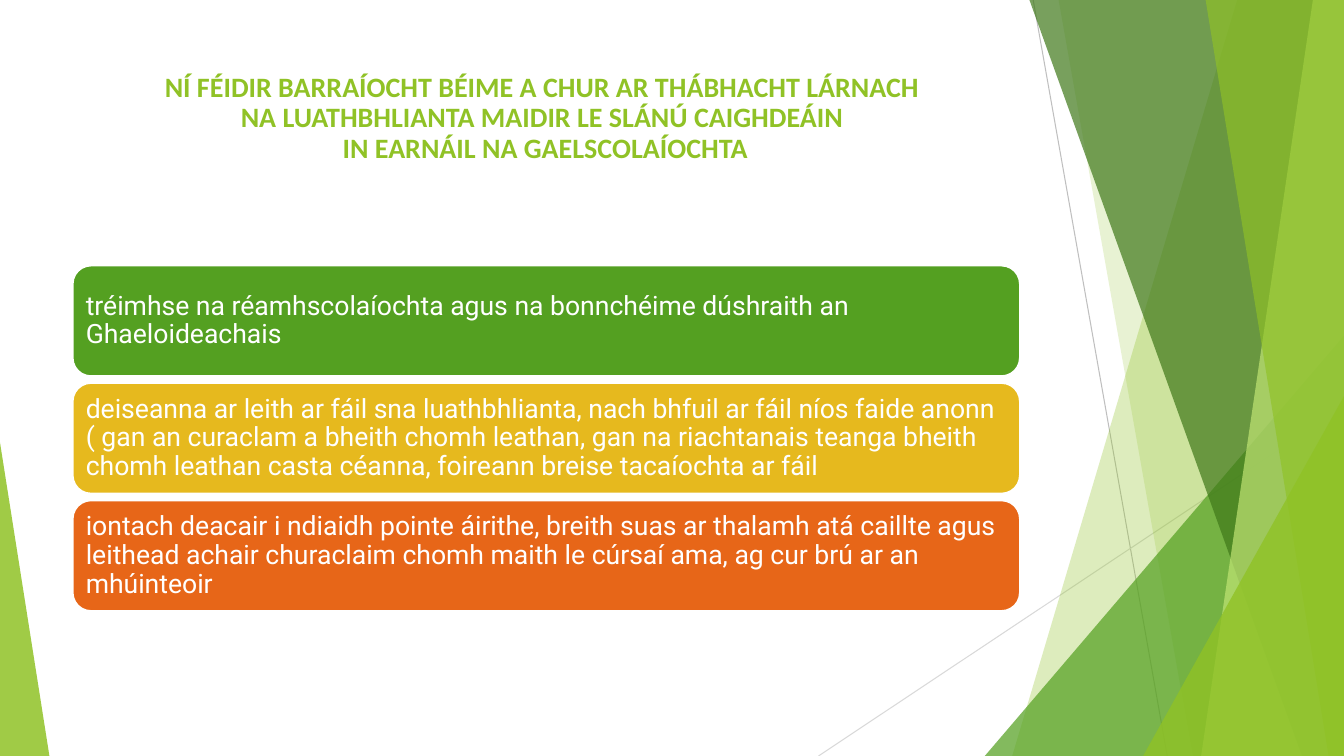
"""Build the slide on the central importance of the early years in Irish-medium education."""
from lxml import etree
from pptx import Presentation
from pptx.dml.color import RGBColor
from pptx.enum.shapes import MSO_CONNECTOR, MSO_SHAPE
from pptx.enum.text import MSO_ANCHOR, PP_ALIGN
from pptx.oxml.ns import qn
from pptx.util import Pt

ROUNDED = MSO_SHAPE.ROUNDED_RECTANGLE
TRIANGLE = MSO_SHAPE.ISOSCELES_TRIANGLE
STRAIGHT = MSO_CONNECTOR.STRAIGHT
LEFT, CENTER = PP_ALIGN.LEFT, PP_ALIGN.CENTER
TOP, MIDDLE = MSO_ANCHOR.TOP, MSO_ANCHOR.MIDDLE

WHITE = RGBColor(0xFF, 0xFF, 0xFF)
LIME = RGBColor(0x90, 0xC2, 0x26)
PALE_LIME = RGBColor(0xC0, 0xE4, 0x74)
GREEN = RGBColor(0x54, 0xA0, 0x21)
DARK_GREEN = RGBColor(0x3F, 0x78, 0x19)
GOLD = RGBColor(0xE6, 0xB9, 0x1E)
ORANGE = RGBColor(0xE7, 0x66, 0x18)
GREY = RGBColor(0xBF, 0xBF, 0xBF)
LIGHT_GREY = RGBColor(0xD9, 0xD9, 0xD9)

HEADING = (
    "NÍ FÉIDIR BARRAÍOCHT BÉIME A CHUR AR THÁBHACHT LÁRNACH ",
    "NA LUATHBHLIANTA MAIDIR LE SLÁNÚ CAIGHDEÁIN ",
    "IN EARNÁIL NA GAELSCOLAÍOCHTA",
)
POINTS = [
    ("tréimhse na réamhscolaíochta agus na bonnchéime dúshraith an Ghaeloideachais", GREEN),
    ("deiseanna ar leith ar fáil sna luathbhlianta, nach bhfuil ar fáil níos faide anonn "
     "( gan an curaclam a bheith chomh leathan, gan na riachtanais teanga bheith "
     "chomh leathan casta céanna, foireann breise tacaíochta ar fáil", GOLD),
    ("iontach deacair i ndiaidh pointe áirithe, breith suas ar thalamh atá caillte agus "
     "leithead achair churaclaim chomh maith le cúrsaí ama, ag cur brú ar an mhúinteoir", ORANGE),
]

SLIDE_W, SLIDE_H = 960, 540
BLEED = 0.6
RAYS = [
    ((738, 0), (833.76, SLIDE_H), GREY),
    ((SLIDE_W, 290.16), (584.64, SLIDE_H), LIGHT_GREY),
]
FACETS = [
    ("shard", (884.16, 722.88), LIME, 30),
    ("shard", (756, 851.76), LIME, 20),
    ("peak", (703.44, 239.76, 256.56, 1), GREEN, 72),
    ("shard", (735.12, 929.52), DARK_GREEN, 70),
    ("shard", (938.16, 858.24), PALE_LIME, 70),
    ("shard", (861.12, 948.96), LIME, 65),
    ("peak", (816.48, 282.96, 143.52, 1), LIME, 80),
    ("peak", (0, 316.08, 35.28, 0), LIME, 85),
]
CARD_X, CARD_Y, CARD_W, CARD_H, CARD_PITCH = 51.84, 189.6, 676.8, 79.2, 83.88


def write(shape, text, *, font, size, color, bold=False, align=LEFT, anchor=TOP,
          inset_x=7.2, inset_y=3.6):
    frame = shape.text_frame
    frame.word_wrap = True
    frame.vertical_anchor = anchor
    frame.margin_left = frame.margin_right = Pt(inset_x)
    frame.margin_top = frame.margin_bottom = Pt(inset_y)
    paragraph = frame.paragraphs[0]
    paragraph.text = text
    paragraph.alignment = align
    paragraph.line_spacing = 0.9
    for run in paragraph.runs:
        run.font.name = font
        run.font.size = Pt(size)
        run.font.bold = bold
        run.font.color.rgb = color


def paint(shape, color, opacity=100):
    shape.shadow.inherit = False
    shape.fill.solid()
    shape.fill.fore_color.rgb = color
    shape.line.fill.background()
    if opacity < 100:
        tint = shape.fill._xPr.find(qn("a:solidFill"))[0]
        etree.SubElement(tint, qn("a:alpha"), val=str(opacity * 1000))


def add_ray(shapes, start, end, color):
    ray = shapes.add_connector(STRAIGHT, *map(Pt, start + end))
    ray.line.color.rgb = color
    ray.line.width = Pt(0.75)
    etree.SubElement(ray._element.spPr, qn("a:effectLst"))


def add_shard(shapes, top_x, bottom_x):
    outline = shapes.build_freeform(top_x, -BLEED, scale=Pt(1))
    outline.add_line_segments(
        [(SLIDE_W, -BLEED), (SLIDE_W, SLIDE_H), (bottom_x, SLIDE_H)], close=True)
    return outline.convert_to_shape()


def add_peak(shapes, left, top, width, apex):
    peak = shapes.add_shape(TRIANGLE, Pt(left), Pt(top), Pt(width), Pt(SLIDE_H - top))
    peak.adjustments[0] = apex
    return peak


def main():
    deck = Presentation()
    deck.slide_width, deck.slide_height = Pt(SLIDE_W), Pt(SLIDE_H)
    slide = deck.slides.add_slide(deck.slide_layouts[6])
    shapes = slide.shapes
    slide.background.fill.solid()
    slide.background.fill.fore_color.rgb = WHITE

    for start, end, color in RAYS:
        add_ray(shapes, start, end, color)
    builders = {"shard": add_shard, "peak": add_peak}
    for kind, geometry, color, opacity in FACETS:
        paint(builders[kind](shapes, *geometry), color, opacity)

    heading = shapes.add_textbox(Pt(51.12), Pt(48.96), Pt(CARD_W), Pt(103.68))
    write(heading, "\v".join(HEADING), font="Calibri", size=20, color=LIME,
          bold=True, align=CENTER)

    for row, (text, color) in enumerate(POINTS):
        card = shapes.add_shape(ROUNDED, Pt(CARD_X), Pt(CARD_Y + row * CARD_PITCH),
                                Pt(CARD_W), Pt(CARD_H))
        paint(card, color)
        card.line.color.rgb = WHITE
        card.line.width = Pt(1.5)
        write(card, text, font="Roboto", size=19, color=WHITE, anchor=MIDDLE,
              inset_x=5.6, inset_y=5.6)

    deck.save("out.pptx")


if __name__ == "__main__":
    main()
